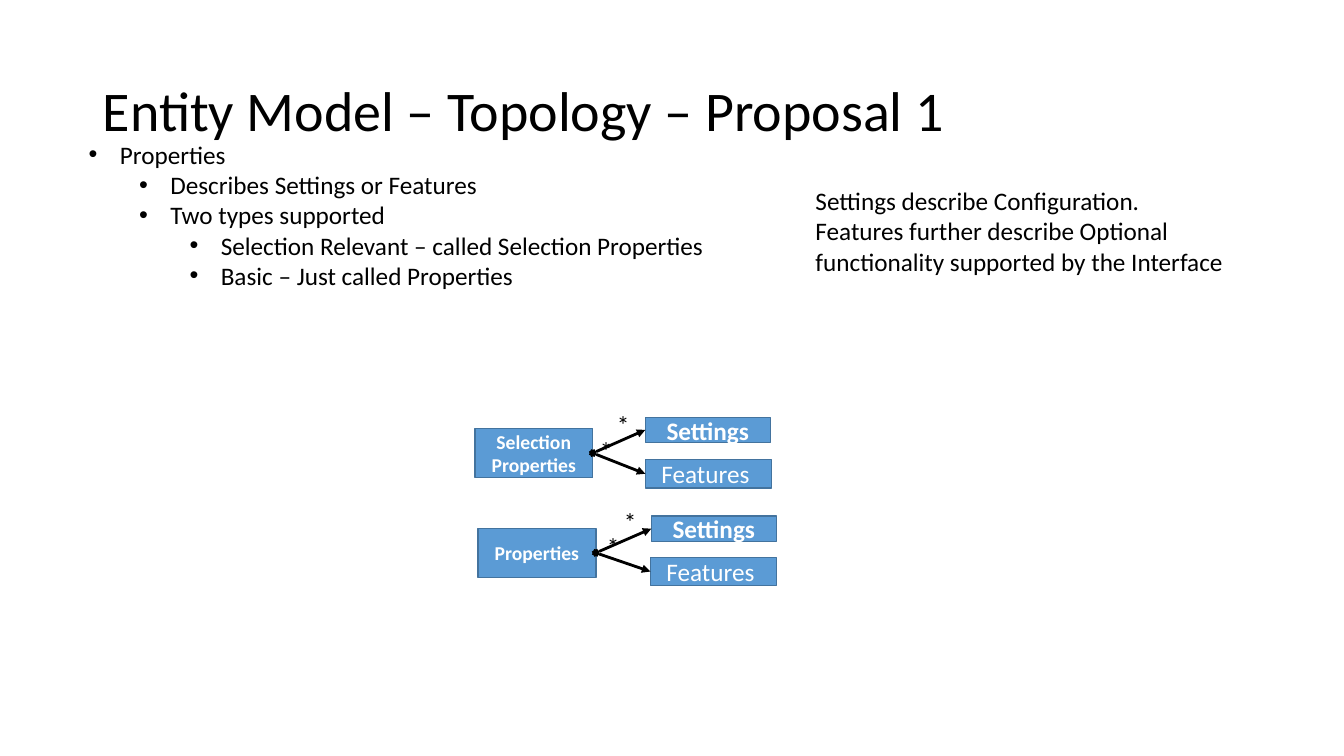
from lxml import etree
from pptx import Presentation
from pptx import util as u
from pptx.dml.color import RGBColor
from pptx.enum import shapes, text
from pptx.oxml.ns import qn

PX = 9144
FONT = "Calibri"
BLACK = RGBColor(0x00, 0x00, 0x00)
WHITE = RGBColor(0xFF, 0xFF, 0xFF)
BLUE = RGBColor(0x5B, 0x9B, 0xD5)
BORDER = RGBColor(0x43, 0x73, 0x9E)

PROPERTY_LIST = [
    (0, "Properties"),
    (1, "Describes Settings or Features"),
    (1, "Two types supported"),
    (2, "Selection Relevant – called Selection Properties"),
    (2, "Basic – Just called Properties"),
]
EXPLANATION = [
    "Settings describe Configuration.",
    "Features further describe Optional functionality supported by the Interface",
]
ENTITY_GROUPS = [
    ("Selection Properties", (471, 425), (640, 414), (640, 456), [(602, 401, 39), (585, 427, 22)]),
    ("Properties", (474, 524), (646, 512), (645, 553), [(609, 497, 39), (592, 522, 22)]),
]


def px(*lengths):
    return [u.Emu(length * PX) for length in lengths]


def place(shape, left, top, width, height):
    shape.left, shape.top, shape.width, shape.height = px(left, top, width, height)


def format_para(para, size, color=BLACK, bold=False):
    for span in para.runs:
        span.font.name = FONT
        span.font.size = u.Pt(size)
        span.font.bold = bold
        span.font.color.rgb = color


def add_title(page, words):
    title = page.shapes.title
    place(title, 92, 40, 1150, 145)
    frame = title.text_frame
    frame.text = words
    frame.auto_size = text.MSO_AUTO_SIZE.NONE
    frame.vertical_anchor = text.MSO_ANCHOR.MIDDLE
    para = frame.paragraphs[0]
    para.alignment = text.PP_ALIGN.LEFT
    para.line_spacing = 0.9
    format_para(para, 40)


def set_bullet(para, level):
    para.level = level
    props = para._p.get_or_add_pPr()
    props.set("marL", str((31 + 50 * level) * PX))
    props.set("indent", str(-31 * PX))
    etree.SubElement(props, qn("a:buFont")).set("typeface", "Arial")
    etree.SubElement(props, qn("a:buChar")).set("char", "•")


def add_list(page, items):
    body = page.placeholders[1]
    place(body, 78, 133, 704, 222)
    frame = body.text_frame
    frame.text = "\n".join(words for level, words in items)
    frame.auto_size = text.MSO_AUTO_SIZE.NONE
    frame.vertical_anchor = text.MSO_ANCHOR.TOP
    for para, (level, words) in zip(frame.paragraphs, items):
        para.space_before = u.Pt(0)
        set_bullet(para, level)
        format_para(para, 18)


def add_note(page, lines, left, top, width, height):
    box = page.shapes.add_textbox(*px(left, top, width, height))
    frame = box.text_frame
    frame.text = "\n".join(lines)
    frame.word_wrap = True
    frame.auto_size = text.MSO_AUTO_SIZE.SHAPE_TO_FIT_TEXT
    for para in frame.paragraphs:
        format_para(para, 18)


def add_entity(page, words, corner, width, height, size, bold):
    box = page.shapes.add_shape(shapes.MSO_SHAPE.RECTANGLE, *px(*corner, width, height))
    box.shadow.inherit = False
    box.fill.solid()
    box.fill.fore_color.rgb = BLUE
    box.line.color.rgb = BORDER
    box.line.width = u.Pt(1)
    frame = box.text_frame
    frame.text = words
    frame.word_wrap = True
    frame.vertical_anchor = text.MSO_ANCHOR.MIDDLE
    para = frame.paragraphs[0]
    para.alignment = text.PP_ALIGN.CENTER
    format_para(para, size, WHITE, bold)
    return box


def join(page, owner, part):
    arrow = page.shapes.add_connector(shapes.MSO_CONNECTOR.STRAIGHT, 0, 0, 0, 0)
    arrow.begin_connect(owner, 3)
    arrow.end_connect(part, 1)
    arrow.line.color.rgb = BLACK
    arrow.line.width = u.Pt(2)
    line = arrow.line._get_or_add_ln()
    etree.SubElement(line, qn("a:headEnd")).set("type", "diamond")
    etree.SubElement(line, qn("a:tailEnd")).set("type", "triangle")
    etree.SubElement(arrow._element.spPr, qn("a:effectLst"))


def add_entity_group(page, name, owner_at, settings_at, features_at, stars):
    owner = add_entity(page, name, owner_at, 117, 49, 14, True)
    features = add_entity(page, "Features ", features_at, 125, 28, 18, False)
    settings = add_entity(page, "Settings", settings_at, 124, 25, 18, True)
    for part in (settings, features):
        join(page, owner, part)
    for left, top, width in stars:
        add_note(page, ["*"], left, top, width, 40)


def main():
    deck = Presentation()
    deck.slide_width, deck.slide_height = px(1333, 750)
    page = deck.slides.add_slide(deck.slide_layouts[1])
    add_title(page, "Entity Model – Topology – Proposal 1")
    add_list(page, PROPERTY_LIST)
    for group in ENTITY_GROUPS:
        add_entity_group(page, *group)
    add_note(page, EXPLANATION, 799, 179, 436, 101)
    deck.save("out.pptx")


if __name__ == "__main__":
    main()
